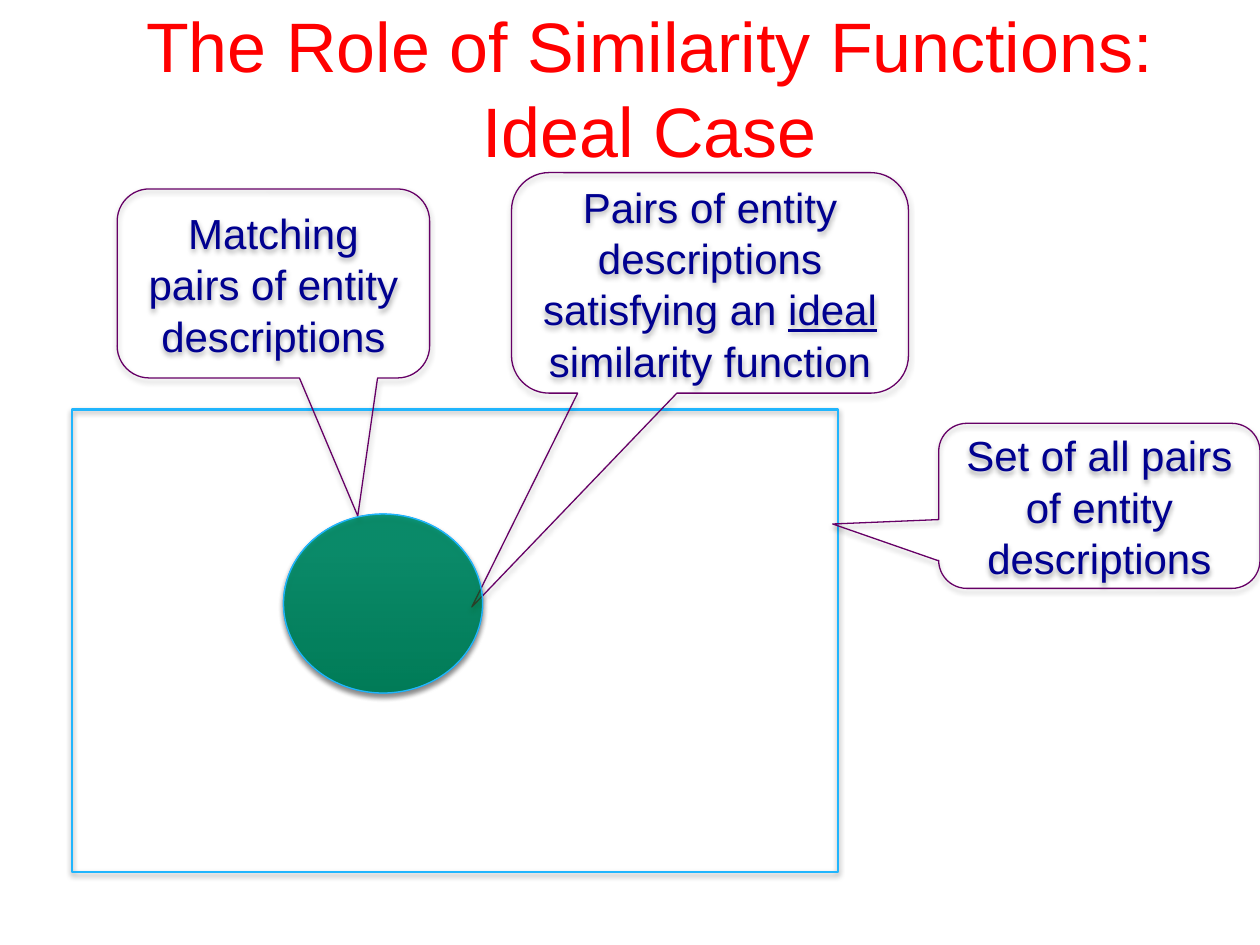
"""Build the slide on similarity functions in the ideal case."""
import pptx
import pptx.dml.color
import pptx.enum.dml
import pptx.enum.shapes
import pptx.enum.text
import pptx.oxml
import pptx.oxml.ns
import pptx.util
from pptx.util import Inches

RED = pptx.dml.color.RGBColor(0xFF, 0x00, 0x00)
NAVY = pptx.dml.color.RGBColor(0x00, 0x00, 0x90)
PURPLE = pptx.dml.color.RGBColor(0x66, 0x00, 0x66)
GREEN = pptx.dml.color.RGBColor(0x00, 0x80, 0x00)
SKY = pptx.dml.color.RGBColor(0x20, 0xB5, 0xFD)
DEEP_BLUE = pptx.dml.color.RGBColor(0x04, 0x91, 0xD5)
BRIGHT_BLUE = pptx.dml.color.RGBColor(0x1B, 0xB5, 0xFF)
KINDS = pptx.enum.shapes.MSO_SHAPE
MATCHES = (2.25, 4.08, 1.58, 1.42)


def add_shadow(shape):
    """Give a shape a soft shadow straight below it."""
    shape.shadow.inherit = False
    effects = shape._element.spPr.find(pptx.oxml.ns.qn("a:effectLst"))
    effects.append(pptx.oxml.parse_xml(
        f'<a:outerShdw {pptx.oxml.ns.nsdecls("a")} blurRad="39370" dist="22860" '
        'dir="5400000" rotWithShape="0"><a:srgbClr val="000000">'
        '<a:alpha val="35000"/></a:srgbClr></a:outerShdw>'))


def add_outline(page, kind, place, color, width=0.75):
    """Add an unfilled preset shape with a line and a shadow."""
    shape = page.shapes.add_shape(kind, *map(Inches, place))
    shape.fill.background()
    shape.line.color.rgb = color
    shape.line.width = pptx.util.Pt(width)
    add_shadow(shape)
    return shape


def write_text(box, *parts, size, color, underlined=None):
    """Write parts as runs of one centred paragraph in a box."""
    frame = box.text_frame
    frame.word_wrap = True
    frame.vertical_anchor = pptx.enum.text.MSO_ANCHOR.MIDDLE
    para = frame.paragraphs[0]
    para.alignment = pptx.enum.text.PP_ALIGN.CENTER
    para.line_spacing = 1.02
    for part in parts:
        span = para.add_run()
        span.text = part
        span.font.name = "Arial"
        span.font.size = pptx.util.Pt(size)
        span.font.color.rgb = color
        if part == underlined:
            span.font.underline = True


def add_title(page, text):
    """Add the slide title."""
    box = page.shapes.add_textbox(*map(Inches, (0.79, 0, 8.75, 1.37)))
    frame = box.text_frame
    frame.margin_left, frame.margin_right = Inches(0.14), Inches(0.16)
    frame.margin_top = frame.margin_bottom = 0
    write_text(box, text, size=40, color=RED)


def add_callout(page, place, tip, *parts, underlined=None):
    """Add a rounded callout whose tip is relative to its centre."""
    callout = add_outline(page, KINDS.ROUNDED_RECTANGULAR_CALLOUT, place, PURPLE)
    for index, value in enumerate((*tip, 0.17)):
        callout.adjustments[index] = value
    write_text(callout, *parts, size=24, color=NAVY, underlined=underlined)


def add_blue_circle(page):
    """Add the gradient circle of matching pairs."""
    fill = add_outline(page, KINDS.OVAL, MATCHES, SKY).fill
    fill.gradient()
    fill.gradient_angle = 90
    stops = ((0, DEEP_BLUE), (0.8, BRIGHT_BLUE))
    for stop, (position, color) in zip(fill.gradient_stops, stops):
        stop.position = position
        stop.color.rgb = color


def add_green_circle(page):
    """Add the half transparent circle of pairs found by the function."""
    circle = add_outline(page, KINDS.OVAL, MATCHES, SKY)
    circle.fill.solid()
    circle.fill.fore_color.rgb = GREEN
    color = circle._element.spPr.find(
        pptx.oxml.ns.qn("a:solidFill") + "/" + pptx.oxml.ns.qn("a:srgbClr"))
    color.append(pptx.oxml.parse_xml(
        f'<a:alpha {pptx.oxml.ns.nsdecls("a")} val="50000"/>'))


def main():
    """Build and save the deck."""
    deck = pptx.Presentation()
    deck.slide_width, deck.slide_height = Inches(10), Inches(7.5)
    page = deck.slides.add_slide(deck.slide_layouts[6])
    add_title(page, "The Role of Similarity Functions: Ideal Case")
    add_outline(page, KINDS.RECTANGLE, (0.57, 3.25, 6.08, 3.67), SKY, width=1.5)
    add_callout(page, (7.45, 3.36, 2.55, 1.31), (-0.83, 0.11),
                "Set of all pairs of entity descriptions")
    add_blue_circle(page)
    add_callout(page, (0.93, 1.5, 2.48, 1.5), (0.27, 1.23),
                "Matching pairs of entity descriptions")
    add_callout(page, (4.06, 1.37, 3.15, 1.75), (-0.6, 1.47),
                "Pairs of entity descriptions satisfying an ", "ideal",
                " similarity function", underlined="ideal")
    add_green_circle(page)
    deck.save("out.pptx")


if __name__ == "__main__":
    main()
